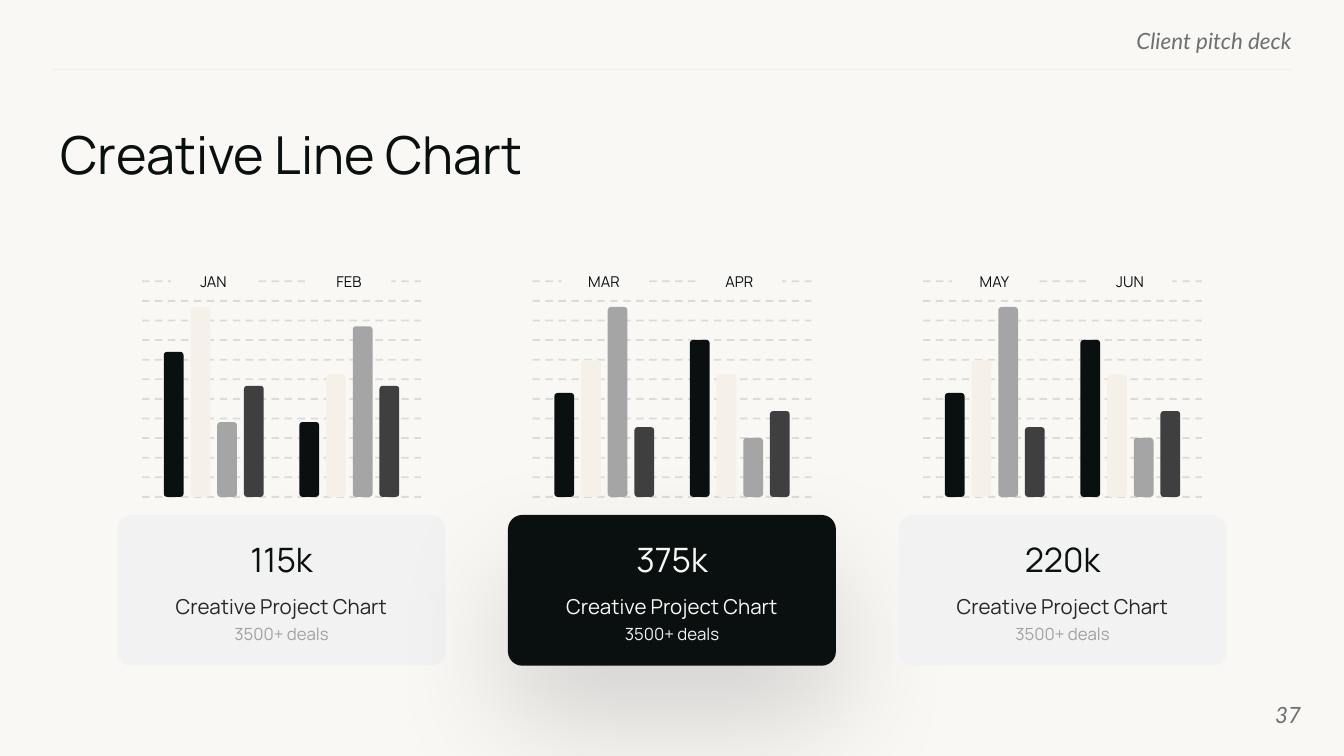
"""Build the monthly bar panels slide with three summary cards."""
from lxml import etree
from pptx import Presentation
from pptx.dml.color import RGBColor
from pptx.enum.dml import MSO_LINE
from pptx.enum.shapes import MSO_CONNECTOR, MSO_SHAPE
from pptx.enum.text import MSO_ANCHOR, MSO_AUTO_SIZE, PP_ALIGN
from pptx.oxml.ns import qn
from pptx.util import Pt

RECT, ROUNDED = MSO_SHAPE.RECTANGLE, MSO_SHAPE.ROUNDED_RECTANGLE
STRAIGHT, DASH = MSO_CONNECTOR.STRAIGHT, MSO_LINE.DASH
TOP, MIDDLE = MSO_ANCHOR.TOP, MSO_ANCHOR.MIDDLE
LEFT, CENTER, RIGHT = PP_ALIGN.LEFT, PP_ALIGN.CENTER, PP_ALIGN.RIGHT
FIXED, GROW = MSO_AUTO_SIZE.NONE, MSO_AUTO_SIZE.SHAPE_TO_FIT_TEXT

TITLE = "Creative Line Chart"
HEADER = "Client pitch deck"
PAGE_NUMBER = "37"
SPRING = (55.7, 73.3, 101.7, 37.4)
SUMMER = (84.1, 65.7, 31.6, 46)
PANELS = [
    {"value": "115k", "dark": False,
     "months": [("JAN", (77.7, 101.7, 40.1, 59.5)), ("FEB", (40.1, 65.7, 91.4, 59.5))]},
    {"value": "375k", "dark": True, "months": [("MAR", SPRING), ("APR", SUMMER)]},
    {"value": "220k", "dark": False, "months": [("MAY", SPRING), ("JUN", SUMMER)]},
]
CAPTION = "Creative Project Chart"
DEALS = "3500+ deals"

THEME = {
    "body": "Manrope", "accent": "Lato",
    "paper": "F9F8F5", "ink": "09100F", "muted": "6C706F", "rule": "EFEFEF",
    "grid": "A5A5A5", "bars": ("09100F", "F5F1E8", "A5A5A5", "3F3F3F"),
    "light_card": {"fill": "F2F2F2", "value": "09100F", "caption": "262626", "deals": "A0A1A3"},
    "dark_card": {"fill": "09100F", "value": "F9F8F5", "caption": "F9F8F5", "deals": "F3F3F3"},
    "title_size": 28, "value_size": 18, "header_size": 12,
    "caption_size": 11, "deals_size": 9, "month_size": 8,
}

PAGE_W, PAGE_H = 720, 405
PANEL_PITCH = 209.2
CARD_TOP, CARD_W, CARD_H = 275.9, 175.7, 80.8
GRID_W, GRID_BOTTOM, GRID_PITCH, GRID_LINES = 149.4, 266.2, 10.5, 12
BARS_OFFSET, MONTH_PITCH, BAR_PITCH, BAR_W = -63, 72.6, 14.3, 10.6
MONTH_TOP, MONTH_W, MONTH_H, MONTH_INDENT = 143.3, 45.4, 15.1, 3.9
INSETS = (5.4, 2.7)


def color(name):
    return RGBColor.from_string(name)


def write(shape, text, size, ink, align=CENTER, font=THEME["body"], italic=False,
          insets=INSETS, anchor=TOP, fit=GROW, spacing=None):
    frame = shape.text_frame
    frame.text = text
    frame.word_wrap = True
    frame.auto_size = fit
    frame.vertical_anchor = anchor
    frame.margin_left = frame.margin_right = Pt(insets[0])
    frame.margin_top = frame.margin_bottom = Pt(insets[1])
    para = frame.paragraphs[0]
    para.alignment = align
    if spacing:
        para.line_spacing = spacing
    span = para.runs[0].font
    span.name, span.size, span.italic = font, Pt(size), italic
    span.color.rgb = color(ink)


def add_text(page, bounds, *args, **style):
    write(page.shapes.add_textbox(*map(Pt, bounds)), *args, **style)


def add_box(page, kind, bounds, fill, corner=None):
    box = page.shapes.add_shape(kind, *map(Pt, bounds))
    box.shadow.inherit = False
    box.fill.solid()
    box.fill.fore_color.rgb = color(fill)
    box.line.fill.background()
    if corner is not None:
        box.adjustments[0] = corner
    return box


def add_rule(page, left, right, y, ink, width):
    rule = page.shapes.add_connector(STRAIGHT, Pt(left), Pt(y), Pt(right), Pt(y))
    rule.line.color.rgb = color(ink)
    rule.line.width = Pt(width)
    etree.SubElement(rule.element.spPr, qn("a:effectLst"))
    return rule


def set_opacity(color_node, percent):
    etree.SubElement(color_node, qn("a:alpha"), val=str(percent * 1000))


def add_soft_shadow(box):
    effects = box.element.spPr.find(qn("a:effectLst"))
    shadow = etree.SubElement(effects, qn("a:outerShdw"), blurRad=str(Pt(66)),
                              dist=str(Pt(30)), dir="5400000", algn="t", rotWithShape="0")
    set_opacity(etree.SubElement(shadow, qn("a:srgbClr"), val="000000"), 15)


def add_card(page, center, panel):
    look = THEME["dark_card" if panel["dark"] else "light_card"]
    card = add_box(page, ROUNDED, (center - CARD_W / 2, CARD_TOP, CARD_W, CARD_H),
                   look["fill"], 0.095)
    if panel["dark"]:
        add_soft_shadow(card)
    rows = [
        ("deals", DEALS, 326.2, 146.9, 16.6, 1.5),
        ("caption", CAPTION, 308.9, 146.9, 18.7, 1.5),
        ("value", panel["value"], 285.8, 126, 27.4, None),
    ]
    for role, text, top, width, height, spacing in rows:
        add_text(page, (center - width / 2, top, width, height), text,
                 THEME[role + "_size"], look[role], spacing=spacing)


def add_bars(page, center, months):
    for step in range(GRID_LINES):
        line = add_rule(page, center - GRID_W / 2, center + GRID_W / 2,
                        GRID_BOTTOM - step * GRID_PITCH, THEME["grid"], 1)
        line.line.dash_style = DASH
        set_opacity(next(line.element.iter(qn("a:srgbClr"))), 35)
    for index, (month, heights) in enumerate(months):
        left = center + BARS_OFFSET + index * MONTH_PITCH
        for place, (height, fill) in enumerate(zip(heights, THEME["bars"])):
            add_box(page, ROUNDED,
                    (left + place * BAR_PITCH, GRID_BOTTOM - height, BAR_W, height), fill, 0.167)
        label = add_box(page, RECT, (left + MONTH_INDENT, MONTH_TOP, MONTH_W, MONTH_H),
                        THEME["paper"])
        write(label, month, THEME["month_size"], THEME["ink"], anchor=MIDDLE)


def main():
    deck = Presentation()
    deck.slide_width, deck.slide_height = Pt(PAGE_W), Pt(PAGE_H)
    page = deck.slides.add_slide(deck.slide_layouts[5])
    page.background.fill.solid()
    page.background.fill.fore_color.rgb = color(THEME["paper"])

    title = page.shapes.title
    title.left, title.top, title.width, title.height = map(Pt, (32.4, 65.5, 664.6, 36.7))
    write(title, TITLE, THEME["title_size"], THEME["ink"], LEFT, insets=(0, 0), fit=FIXED)
    title.text_frame.paragraphs[0].space_after = Pt(10)

    margin_style = {"align": RIGHT, "font": THEME["accent"], "italic": True,
                    "insets": (0, 0), "fit": FIXED}
    add_text(page, (414.7, 14.4, 277.2, 13), HEADER, THEME["header_size"], THEME["muted"],
             **margin_style)
    add_rule(page, 28.1, 691.9, 37.4, THEME["rule"], 0.75)
    add_text(page, (653.8, 367.2, 43.2, 31), PAGE_NUMBER, THEME["header_size"],
             THEME["muted"], anchor=MIDDLE, **margin_style)

    centers = [PAGE_W / 2 + (index - 1) * PANEL_PITCH for index in range(len(PANELS))]
    for center, panel in zip(centers, PANELS):
        add_card(page, center, panel)
    for center, panel in zip(centers, PANELS):
        add_bars(page, center, panel["months"])
    deck.save("out.pptx")


if __name__ == "__main__":
    main()
